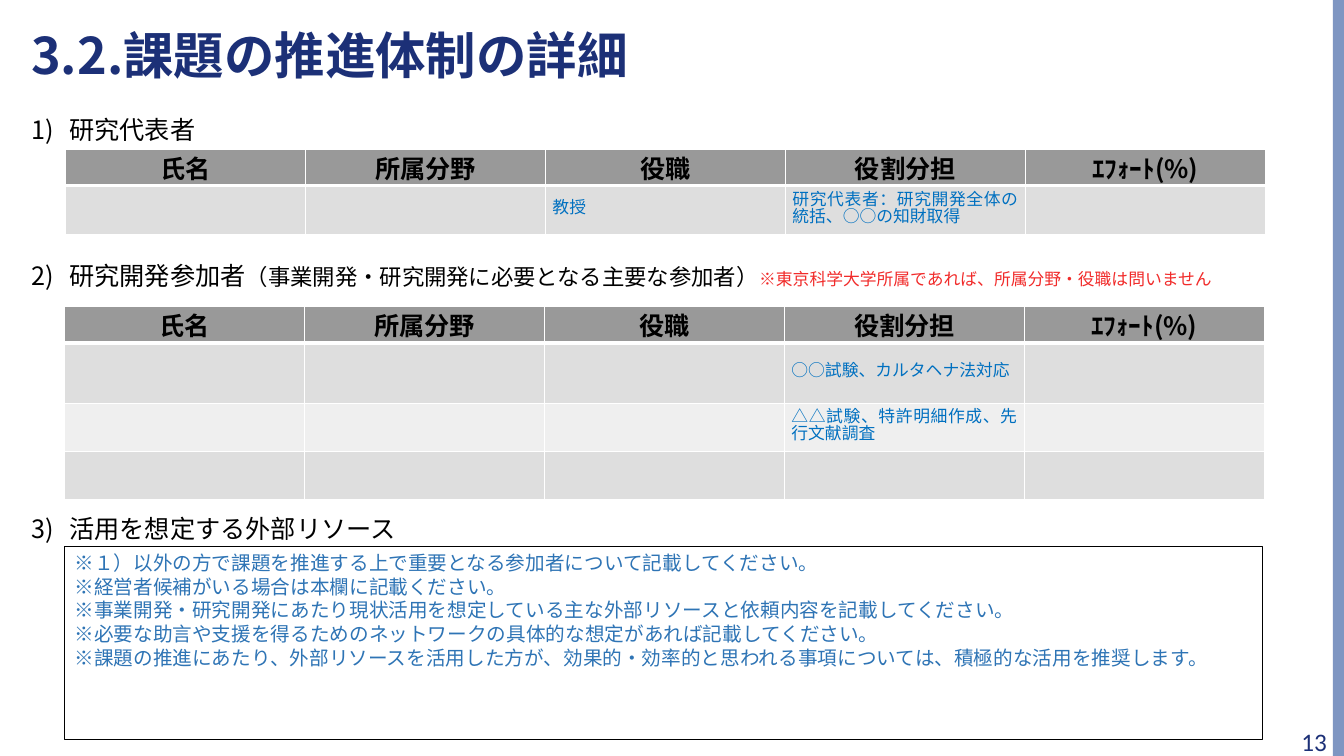
from lxml.etree import SubElement
from pptx import Presentation
from pptx.dml.color import RGBColor
from pptx.enum.shapes import MSO_SHAPE
from pptx.enum.text import MSO_ANCHOR, PP_ALIGN
from pptx.oxml.ns import qn
from pptx.util import Inches, Pt

# Content
TITLE = "3.2.課題の推進体制の詳細"
PAGE_NUMBER = "13"
HEADINGS = [  # (middle of the line, [(text, style)])
    (1.28, [("研究代表者", "heading")]),
    (2.73, [("研究開発参加者", "heading"),
            ("（事業開発・研究開発に必要となる主要な参加者）", "subheading"),
            ("※東京科学大学所属であれば、所属分野・役職は問いません", "warning")]),
    (5.24, [("活用を想定する外部リソース", "heading")]),
]
COLUMNS = ["氏名", "所属分野", "役職", "役割分担", "ｴﾌｫｰﾄ(%)"]
TABLES = [  # left, top, row heights, rows below the header
    {"left": 0.65, "top": 1.48, "heights": [0.36, 0.49],
     "rows": [["", "", "教授", "研究代表者：研究開発全体の統括、○○の知財取得", ""]]},
    {"left": 0.64, "top": 3.04, "heights": [0.36, 0.6, 0.48, 0.48],
     "rows": [["", "", "", "○○試験、カルタヘナ法対応", ""],
              ["", "", "", "△△試験、特許明細作成、先行文献調査", ""],
              ["", "", "", "", ""]]},
]
RESOURCE_NOTES = [
    "※１）以外の方で課題を推進する上で重要となる参加者について記載してください。",
    "※経営者候補がいる場合は本欄に記載ください。",
    "※事業開発・研究開発にあたり現状活用を想定している主な外部リソースと依頼内容を記載してください。",
    "※必要な助言や支援を得るためのネットワークの具体的な想定があれば記載してください。",
    "※課題の推進にあたり、外部リソースを活用した方が、効果的・効率的と思われる事項については、積極的な活用を推奨します。",
]

# Theme: colours, and text styles as (size, colour, bold, font)
JAPANESE = "Noto Sans CJK JP"
THEME = {
    "colors": {"side": "7F96C2", "white": "FFFFFF", "black": "000000",
               "header": "999999", "bands": ["DEDEDE", "EFEFEF"]},
    "styles": {
        "title": (36, "1C3077", True, JAPANESE),
        "heading": (18, "000000", False, JAPANESE),
        "subheading": (16, "000000", False, JAPANESE),
        "warning": (12, "F12B2A", False, JAPANESE),
        "header": (18, "000000", True, JAPANESE),
        "cell": (12, "0070C0", False, JAPANESE),
        "note": (14, "2E74B5", False, JAPANESE),
        "page": (18, "1C3077", False, "Calibri"),
    },
}
COLORS = THEME["colors"]
COLUMN_WIDTH = 2.38
HEADING_HEIGHT = 0.4


def set_all(target, values):
    for name, value in values.items():
        setattr(target, name, value)


def style_font(font, style):
    size, color, bold, name = THEME["styles"][style]
    set_all(font, {"size": Pt(size), "bold": bold, "name": name})
    font.color.rgb = RGBColor.from_string(color)


def add_run(paragraph, text, style):
    run = paragraph.add_run()
    run.text = text
    style_font(run.font, style)
    SubElement(run.font._element, qn("a:ea"), typeface=run.font.name)


def set_indent(paragraph, inches):
    properties = paragraph._p.get_or_add_pPr()
    properties.set("marL", str(Inches(inches)))
    properties.set("indent", str(-Inches(inches)))
    return properties


def fill(target, color):
    target.fill.solid()
    target.fill.fore_color.rgb = RGBColor.from_string(color)


def add_rectangle(slide, box, color):
    shape = slide.shapes.add_shape(MSO_SHAPE.RECTANGLE, *map(Inches, box))
    shape.shadow.inherit = False
    fill(shape, color)
    shape.line.fill.background()
    return shape


def add_label(slide, box):
    frame = slide.shapes.add_textbox(*map(Inches, box)).text_frame
    set_all(frame, {"word_wrap": True, "margin_top": 0, "margin_bottom": 0,
                    "vertical_anchor": MSO_ANCHOR.MIDDLE})
    return frame.paragraphs[0]


def add_borders(cell, bottom_width):
    properties = cell._tc.get_or_add_tcPr()
    for side, width in (("L", 1), ("R", 1), ("T", 1), ("B", bottom_width)):
        line = SubElement(properties, qn(f"a:ln{side}"), w=str(Pt(width)))
        solid = SubElement(line, qn("a:solidFill"))
        SubElement(solid, qn("a:srgbClr"), val=COLORS["white"])


def add_member_table(slide, left, top, heights, rows):
    frame = slide.shapes.add_table(
        len(heights), len(COLUMNS), Inches(left), Inches(top),
        Inches(COLUMN_WIDTH * len(COLUMNS)), Inches(sum(heights)))
    table = frame.table
    for column in table.columns:
        column.width = Inches(COLUMN_WIDTH)
    for row_index, texts in enumerate([COLUMNS] + rows):
        table.rows[row_index].height = Inches(heights[row_index])
        is_header = row_index == 0
        style = "header" if is_header else "cell"
        color = COLORS["header"] if is_header else COLORS["bands"][(row_index - 1) % 2]
        for column_index, text in enumerate(texts):
            cell = table.cell(row_index, column_index)
            set_all(cell, {"margin_left": Inches(0.07), "margin_right": Inches(0.07),
                           "margin_top": 0, "margin_bottom": 0,
                           "vertical_anchor": MSO_ANCHOR.MIDDLE})
            add_borders(cell, 3 if is_header else 1)
            fill(cell, color)
            paragraph = cell.text_frame.paragraphs[0]
            paragraph.alignment = PP_ALIGN.CENTER if is_header else PP_ALIGN.JUSTIFY
            if not is_header:
                paragraph.line_spacing = Pt(12)
            if text:
                add_run(paragraph, text, style)
            else:
                style_font(paragraph.font, style)


def main():
    presentation = Presentation()
    set_all(presentation, {"slide_width": Inches(13.33), "slide_height": Inches(7.5)})
    slide = presentation.slides.add_slide(presentation.slide_layouts[5])

    # Side band
    add_rectangle(slide, (13.22, 0, 0.11, 7.5), COLORS["side"])

    # Title
    title = slide.shapes.title
    set_all(title, {"left": Inches(0.21), "top": Inches(0.3),
                    "width": Inches(9.78), "height": Inches(0.56)})
    set_all(title.text_frame, {"vertical_anchor": MSO_ANCHOR.MIDDLE, "word_wrap": True,
                               "margin_top": 0, "margin_bottom": 0})
    paragraph = title.text_frame.paragraphs[0]
    set_all(paragraph, {"alignment": PP_ALIGN.LEFT, "line_spacing": 0.9})
    add_run(paragraph, TITLE, "title")

    # Numbered headings
    for number, (middle, runs) in enumerate(HEADINGS, 1):
        paragraph = add_label(
            slide, (0.21, middle - HEADING_HEIGHT / 2, 12.76, HEADING_HEIGHT))
        properties = set_indent(paragraph, 0.38)
        SubElement(properties, qn("a:buFont"), typeface=JAPANESE)
        SubElement(properties, qn("a:buAutoNum"), type="arabicParenR", startAt=str(number))
        for text, style in runs:
            add_run(paragraph, text, style)

    # Member tables
    for table in TABLES:
        add_member_table(slide, **table)

    # External resources box
    box = add_rectangle(slide, (0.64, 5.42, 11.88, 1.92), COLORS["white"])
    box.line.color.rgb = RGBColor.from_string(COLORS["black"])
    box.line.width = Pt(0.5)
    frame = box.text_frame
    set_all(frame, {"word_wrap": True, "vertical_anchor": MSO_ANCHOR.TOP})
    for index, note in enumerate(RESOURCE_NOTES):
        paragraph = frame.add_paragraph() if index else frame.paragraphs[0]
        set_indent(paragraph, 0.12)
        set_all(paragraph, {"alignment": PP_ALIGN.LEFT, "line_spacing": Pt(16.8)})
        add_run(paragraph, note, "note")

    # Page number
    paragraph = add_label(slide, (12.55, 7.22, 0.71, 0.27))
    paragraph.alignment = PP_ALIGN.RIGHT
    add_run(paragraph, PAGE_NUMBER, "page")

    presentation.save("out.pptx")


if __name__ == "__main__":
    main()
